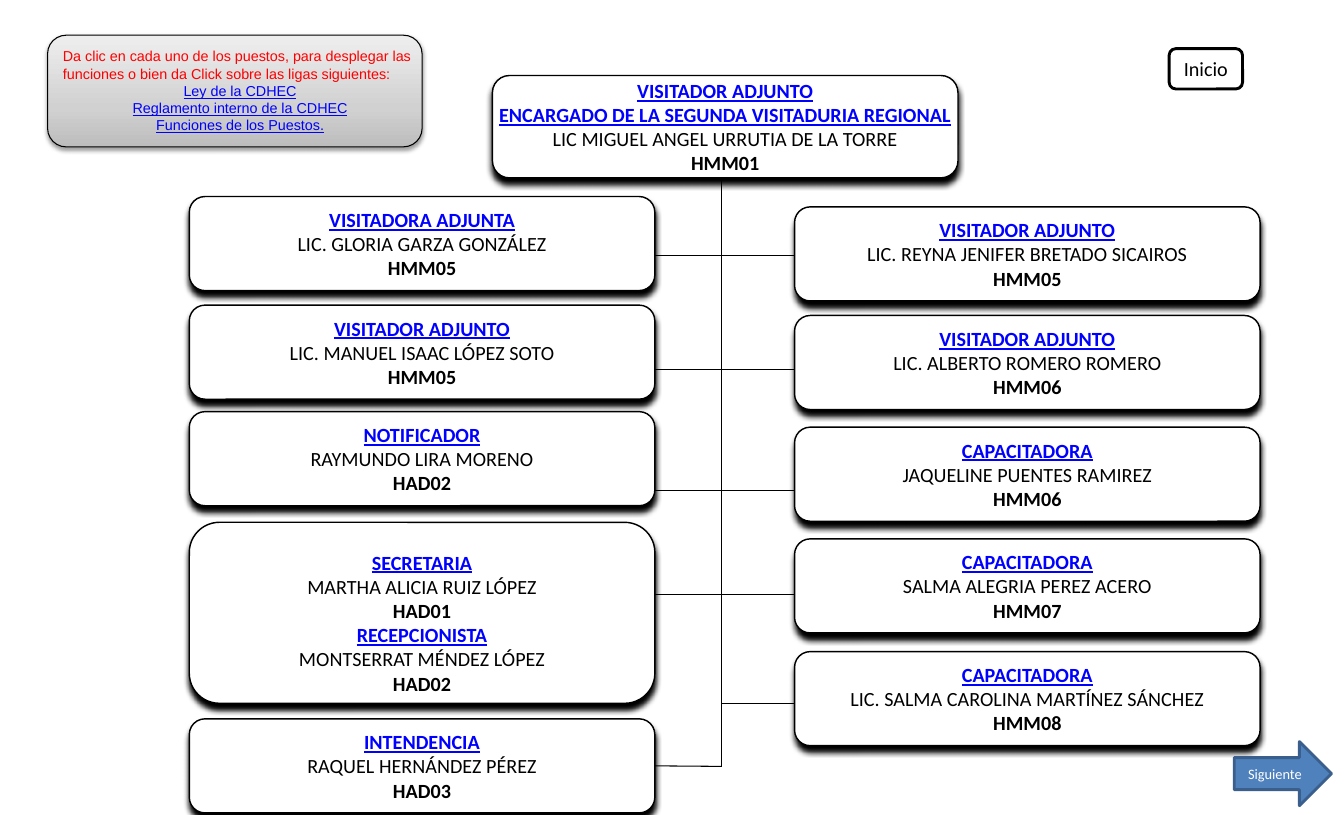
import copy

import lxml.etree
import pptx
import pptx.dml.color
import pptx.enum.shapes
import pptx.enum.text
import pptx.oxml.ns
import pptx.util

BLACK = pptx.dml.color.RGBColor(0x00, 0x00, 0x00)
WHITE = pptx.dml.color.RGBColor(0xFF, 0xFF, 0xFF)
LINK_BLUE = pptx.dml.color.RGBColor(0x00, 0x00, 0xFF)
RED = pptx.dml.color.RGBColor(0xFF, 0x00, 0x00)
ARROW_BLUE = pptx.dml.color.RGBColor(0x4F, 0x81, 0xBD)
ARROW_EDGE = pptx.dml.color.RGBColor(0x3A, 0x5F, 0x8C)
DARK_GREY = pptx.dml.color.RGBColor(0xBD, 0xBD, 0xBD)
MIDDLE_GREY = pptx.dml.color.RGBColor(0xD1, 0xD1, 0xD1)
LIGHT_GREY = pptx.dml.color.RGBColor(0xEE, 0xEE, 0xEE)

CELL = pptx.util.Inches(0.1)
LEFT_COLUMN, RIGHT_COLUMN, SPINE_COLUMN = 18.3, 76.8, 69.7
CARD_WIDTH, CARD_HEIGHT = 45, 9.1
CENTER = pptx.enum.text.PP_ALIGN.CENTER
ROUNDED = pptx.enum.shapes.MSO_SHAPE.ROUNDED_RECTANGLE
STRAIGHT = pptx.enum.shapes.MSO_CONNECTOR.STRAIGHT
qn = pptx.oxml.ns.qn

presentation = pptx.Presentation()
presentation.slide_width = pptx.util.Inches(12.99)
presentation.slide_height = pptx.util.Inches(7.88)
slide = presentation.slides.add_slide(presentation.slide_layouts[6])


def add_box(kind, cells, fill, edge, edge_width, shadow=None):
    shape = slide.shapes.add_shape(kind, *[round(cell * CELL) for cell in cells])
    shape.shadow.inherit = False
    shape.fill.solid()
    shape.fill.fore_color.rgb = fill
    shape.line.color.rgb = edge
    shape.line.width = pptx.util.Pt(edge_width)
    if shadow:
        blur, distance, opacity = shadow
        effects = shape._element.spPr.find(qn("a:effectLst"))
        outer = lxml.etree.SubElement(
            effects, qn("a:outerShdw"), blurRad=str(pptx.util.Pt(blur)),
            dist=str(pptx.util.Pt(distance)), dir="5400000", algn="ctr", rotWithShape="0")
        color = lxml.etree.SubElement(outer, qn("a:srgbClr"), val=str(BLACK))
        lxml.etree.SubElement(color, qn("a:alpha"), val=str(opacity * 1000))
    return shape


def add_text(shape, text, size, color, bold=False, underline=False, font="Calibri", alignment=CENTER):
    frame = shape.text_frame
    paragraph = frame.paragraphs[0]
    if paragraph.runs:
        paragraph = frame.add_paragraph()
    paragraph.alignment = alignment
    run = paragraph.add_run()
    run.text = text
    run.font.name = font
    run.font.size = pptx.util.Pt(size)
    run.font.color.rgb = color
    run.font.bold = bold
    run.font.underline = underline


lines = [(SPINE_COLUMN, 10.8, SPINE_COLUMN, 74.2), (SPINE_COLUMN, 68, 86.2, 68)]
lines += [(58.5, row, 81.5, row) for row in (24.7, 35.7, 47.4, 57.5)]
connectors = [
    slide.shapes.add_connector(STRAIGHT, *[round(cell * CELL) for cell in line])
    for line in lines
]

cards = [
    (47.6, 7.3, 9.9, [(("VISITADOR ADJUNTO", "ENCARGADO DE LA SEGUNDA VISITADURIA REGIONAL"),
                       "LIC MIGUEL ANGEL URRUTIA DE LA TORRE", "HMM01")]),
    (LEFT_COLUMN, 19, CARD_HEIGHT, [(("VISITADORA ADJUNTA",), "LIC. GLORIA GARZA GONZÁLEZ", "HMM05")]),
    (LEFT_COLUMN, 29.5, CARD_HEIGHT, [(("VISITADOR ADJUNTO",), "LIC. MANUEL ISAAC LÓPEZ SOTO", "HMM05")]),
    (LEFT_COLUMN, 39.8, CARD_HEIGHT, [(("NOTIFICADOR",), "RAYMUNDO LIRA MORENO", "HAD02")]),
    (LEFT_COLUMN, 50.5, 17.5, [(("SECRETARIA",), "MARTHA ALICIA RUIZ LÓPEZ", "HAD01"),
                               (("RECEPCIONISTA",), "MONTSERRAT MÉNDEZ LÓPEZ", "HAD02")]),
    (RIGHT_COLUMN, 20, CARD_HEIGHT, [(("VISITADOR ADJUNTO",), "LIC. REYNA JENIFER BRETADO SICAIROS", "HMM05")]),
    (RIGHT_COLUMN, 30.5, CARD_HEIGHT, [(("VISITADOR ADJUNTO",), "LIC. ALBERTO ROMERO ROMERO", "HMM06")]),
    (RIGHT_COLUMN, 41.3, CARD_HEIGHT, [(("CAPACITADORA",), "JAQUELINE PUENTES RAMIREZ", "HMM06")]),
    (RIGHT_COLUMN, 52.1, CARD_HEIGHT, [(("CAPACITADORA",), "SALMA ALEGRIA PEREZ ACERO", "HMM07")]),
    (RIGHT_COLUMN, 63, CARD_HEIGHT, [(("CAPACITADORA",), "LIC. SALMA CAROLINA MARTÍNEZ SÁNCHEZ", "HMM08")]),
    (LEFT_COLUMN, 69.5, CARD_HEIGHT, [(("INTENDENCIA",), "RAQUEL HERNÁNDEZ PÉREZ", "HAD03")]),
]
for column, row, height, posts in cards:
    card = add_box(ROUNDED, (column, row, CARD_WIDTH, height), WHITE, BLACK, 1, (4, 4, 100))
    frame = card.text_frame
    frame.word_wrap = False
    frame.vertical_anchor = pptx.enum.text.MSO_ANCHOR.MIDDLE
    frame.margin_left = frame.margin_right = round(1.7 * CELL)
    frame.margin_bottom = round(0.9 * CELL)
    frame.margin_top = round((0.9 if len(posts) == 1 else 2.8) * CELL)
    for titles, person, code in posts:
        for title in titles:
            add_text(card, title, 14, LINK_BLUE, bold=True, underline=True)
        add_text(card, person, 14, BLACK)
        add_text(card, code, 14, BLACK, bold=True)

last_branch = slide.shapes.add_connector(
    STRAIGHT, 0, 0, round(SPINE_COLUMN * CELL), round(74.1 * CELL))
last_branch.begin_connect(card, 3)
connectors.append(last_branch)
for connector in connectors:
    connector.line.color.rgb = BLACK
    connector.line.width = pptx.util.Pt(0.75)
    lxml.etree.SubElement(connector._element.spPr, qn("a:effectLst"))

home = add_box(ROUNDED, (113, 4.7, 7.1, 3.9), WHITE, BLACK, 2)
add_text(home, "Inicio", 14, BLACK)

panel = add_box(ROUNDED, (4.6, 3.4, 36.2, 10.8), LIGHT_GREY, BLACK, 0.75, (3.1, 1.6, 38))
panel.fill.gradient()
panel.fill.gradient_angle = 90
stop_list = panel._element.spPr.find(qn("a:gradFill")).find(qn("a:gsLst"))
stop_list.insert(1, copy.deepcopy(stop_list[0]))
for stop, position, grey in zip(
        panel.fill.gradient_stops, (0, 0.35, 1), (DARK_GREY, MIDDLE_GREY, LIGHT_GREY)):
    stop.position = position
    stop.color.rgb = grey

guide = slide.shapes.add_textbox(*[round(cell * CELL) for cell in (5.1, 4.1, 36.2, 9.4)])
guide.text_frame.word_wrap = True
add_text(guide, "Da clic en cada uno de los puestos, para desplegar las funciones "
         "o bien da Click sobre las ligas siguientes:", 10, RED, font="Arial",
         alignment=pptx.enum.text.PP_ALIGN.LEFT)
for link in ("Ley de la CDHEC", "Reglamento interno de la CDHEC", "Funciones de los Puestos."):
    add_text(guide, link, 10, LINK_BLUE, underline=True, font="Arial")

next_arrow = add_box(pptx.enum.shapes.MSO_SHAPE.RIGHT_ARROW, (119.3, 71.7, 9.4, 6.2),
                     ARROW_BLUE, ARROW_EDGE, 2)
add_text(next_arrow, "Siguiente", 10, WHITE)

presentation.save("out.pptx")
